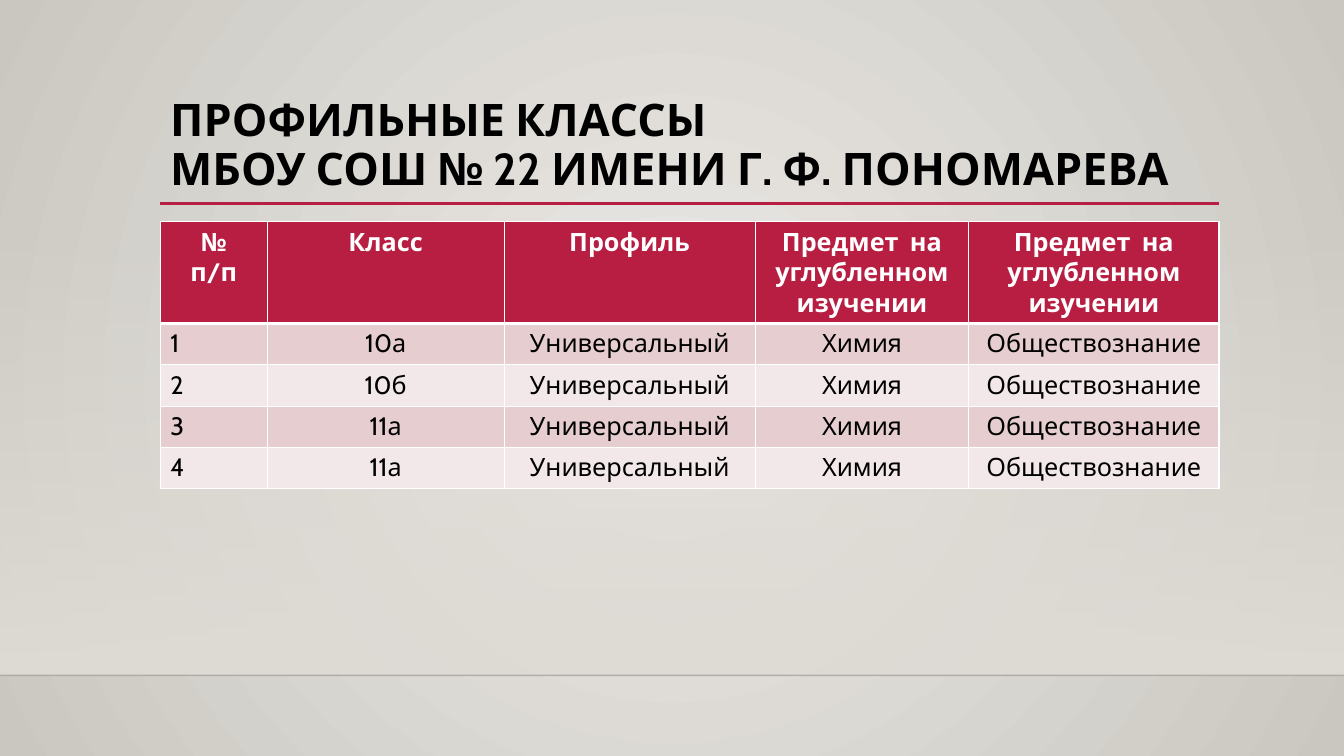
import pptx
import pptx.dml.color
import pptx.enum.shapes
import pptx.enum.text
import pptx.oxml
import pptx.oxml.ns
import pptx.util
from pptx.util import Inches

FONT = "Cabin"
COLORS = {
    "background_center": "ECEAE7",
    "background_edge": "CAC7C1",
    "wall": "DFDBD5",
    "floor_line": "000001",
    "accent": "B71E42",
    "border": "FFFFFF",
    "header_text": "FFFFFF",
    "text": "000000",
    "odd_row": "E6CDCF",
    "even_row": "F3E8E9",
}
SUBJECT_HEADER = "Предмет  на углубленном изучении"
HEADERS = ["№\nп/п", "Класс", "Профиль", SUBJECT_HEADER, SUBJECT_HEADER]
CLASSES = ["10а", "10б", "11а", "11а"]
CLASS_DETAILS = ["Универсальный", "Химия", "Обществознание"]
COLUMN_WIDTHS = [1.06, 2.35, 2.49, 2.12, 2.48]
HEADER_HEIGHT, ROW_HEIGHT = 1.01, 0.41


def rgb(name):
    return pptx.dml.color.RGBColor.from_string(COLORS[name])


def make_element(tag, content="", attributes=""):
    """Return a DrawingML element made from its tag, inner XML and attributes."""
    namespace = pptx.oxml.ns.nsdecls("a")
    return pptx.oxml.parse_xml(f"<a:{tag} {namespace} {attributes}>{content}</a:{tag}>")


def set_alpha(color_element, percent):
    color_element.append(make_element("alpha", attributes=f'val="{percent * 1000}"'))


def set_gradient(fill, *names):
    fill.gradient()
    for stop, name in zip(fill.gradient_stops, names):
        stop.color.rgb = rgb(name)


def style_paragraph(paragraph, size, color, bold):
    font = paragraph.font
    font.name = FONT
    font.size = pptx.util.Pt(size)
    font.bold = bold
    font.color.rgb = rgb(color)


def add_line(slide, left, top, width, color, weight):
    line = slide.shapes.add_connector(
        pptx.enum.shapes.MSO_CONNECTOR.STRAIGHT,
        Inches(left), Inches(top), Inches(left + width), Inches(top))
    line.line.color.rgb = rgb(color)
    line.line.width = pptx.util.Pt(weight)
    line.element.spPr.append(make_element("effectLst"))
    return line


def add_backdrop(slide, width, wall_top, floor_top):
    """Draw the radial background, the fading wall and the floor line."""
    set_gradient(slide.background.fill, "background_center", "background_edge")
    gradient = next(slide.element.iter(pptx.oxml.ns.qn("a:gradFill")))
    gradient.replace(
        gradient.find(pptx.oxml.ns.qn("a:lin")),
        make_element("path", '<a:fillToRect l="50000" t="50000" r="50000" b="50000"/>',
                     'path="circle"'))

    wall = slide.shapes.add_shape(
        pptx.enum.shapes.MSO_SHAPE.RECTANGLE,
        0, Inches(wall_top), Inches(width), Inches(floor_top - wall_top))
    wall.shadow.inherit = False
    wall.line.fill.background()
    set_gradient(wall.fill, "wall", "wall")
    wall.fill.gradient_angle = 270
    set_alpha(next(wall.element.iter(pptx.oxml.ns.qn("a:srgbClr"))), 0)

    floor_line = add_line(slide, 0, floor_top, width, "floor_line", 1)
    set_alpha(next(floor_line.element.iter(pptx.oxml.ns.qn("a:srgbClr"))), 20)


def add_title(slide, left, top, width, height):
    title = slide.shapes.add_textbox(
        Inches(left), Inches(top), Inches(width), Inches(height))
    frame = title.text_frame
    frame.word_wrap = True
    frame.vertical_anchor = pptx.enum.text.MSO_ANCHOR.MIDDLE
    frame.text = "ПРОФИЛЬНЫЕ КЛАССЫ\vМБОУ СОШ № 22 ИМЕНИ Г. Ф. ПОНОМАРЕВА"
    paragraph = frame.paragraphs[0]
    paragraph.line_spacing = 0.9
    style_paragraph(paragraph, 32, "text", True)
    add_line(slide, left, top + height - 0.01, width, "accent", 2.5)


def set_borders(cell, top_weight, bottom_weight):
    properties = cell._tc.get_or_add_tcPr()
    weights = {"lnL": 1, "lnR": 1, "lnT": top_weight, "lnB": bottom_weight}
    for side, weight in weights.items():
        properties.append(make_element(
            side,
            f'<a:solidFill><a:srgbClr val="{COLORS["border"]}"/></a:solidFill>',
            f'w="{pptx.util.Pt(weight)}"'))


def fill_cell(cell, text, row, column):
    is_header = row == 0
    set_borders(cell, 3 if row == 1 else 1, 3 if is_header else 1)
    cell.fill.solid()
    fill_name = "accent" if is_header else "odd_row" if row % 2 else "even_row"
    cell.fill.fore_color.rgb = rgb(fill_name)
    cell.text = text
    for paragraph in cell.text_frame.paragraphs:
        if is_header or column > 0:
            paragraph.alignment = pptx.enum.text.PP_ALIGN.CENTER
        style_paragraph(paragraph, 18, "header_text" if is_header else "text", is_header)


def add_class_table(slide, left, top):
    rows = [HEADERS] + [
        [str(number), name, *CLASS_DETAILS] for number, name in enumerate(CLASSES, 1)]
    heights = [HEADER_HEIGHT] + [ROW_HEIGHT] * len(CLASSES)
    table = slide.shapes.add_table(
        len(rows), len(HEADERS), Inches(left), Inches(top),
        Inches(sum(COLUMN_WIDTHS)), Inches(sum(heights))).table
    for column, width in zip(table.columns, COLUMN_WIDTHS):
        column.width = Inches(width)
    for row, height in zip(table.rows, heights):
        row.height = Inches(height)
    for row, texts in enumerate(rows):
        for column, text in enumerate(texts):
            fill_cell(table.cell(row, column), text, row, column)


def main():
    presentation = pptx.Presentation()
    presentation.slide_width = Inches(13.33)
    presentation.slide_height = Inches(7.5)
    slide = presentation.slides.add_slide(presentation.slide_layouts[6])
    add_backdrop(slide, 13.33, 2.21, 6.7)
    add_title(slide, 1.59, 0.88, 10.5, 1.15)
    add_class_table(slide, 1.59, 2.2)
    presentation.save("out.pptx")


if __name__ == "__main__":
    main()
